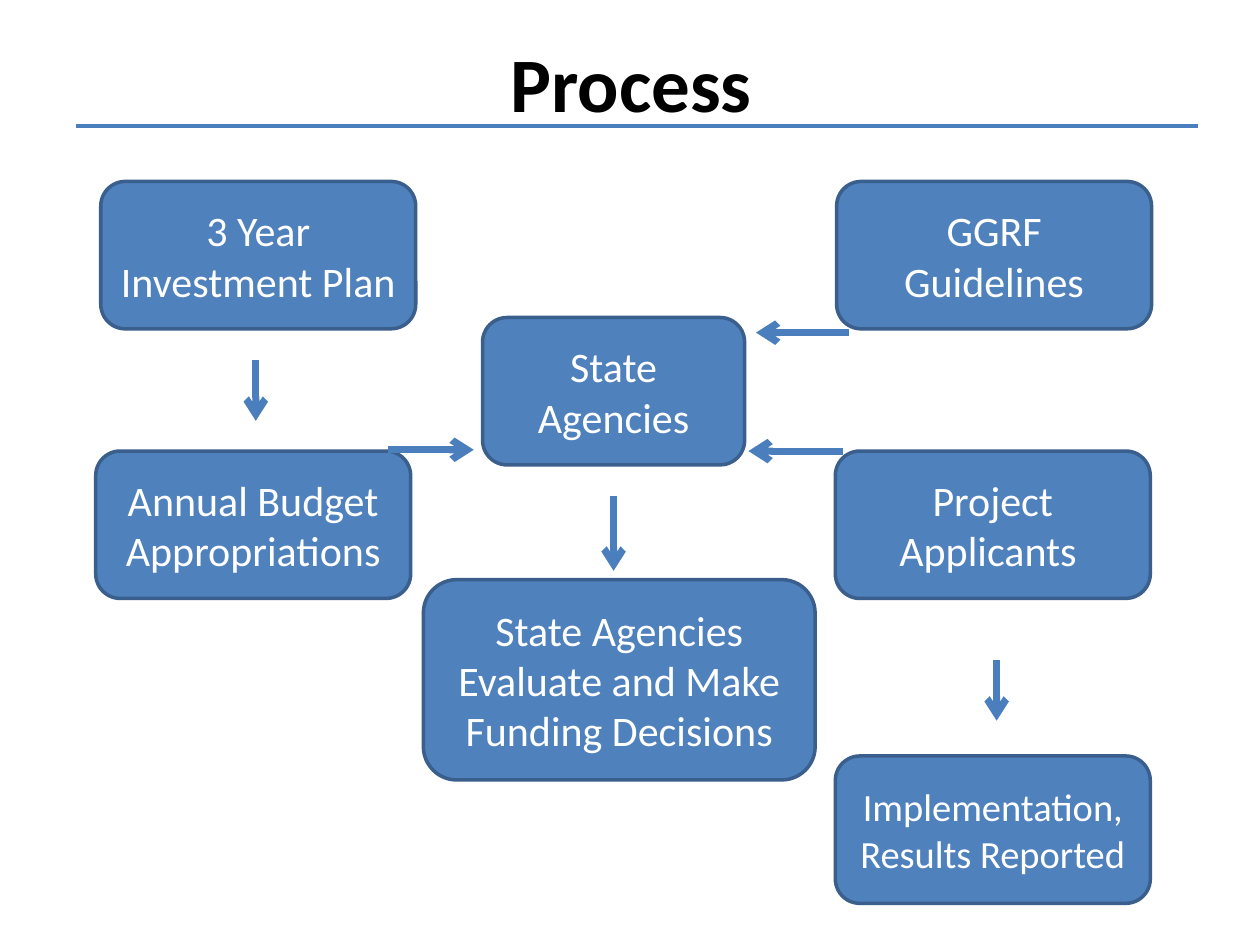
from dataclasses import dataclass

import pptx
import pptx.dml.color
import pptx.enum.shapes
import pptx.enum.text
import pptx.oxml.ns
import pptx.shapes.connector
import pptx.slide
import pptx.text.text
import pptx.util
from lxml import etree

Inches = pptx.util.Inches


@dataclass(frozen=True)
class Theme:
    font: str = "Calibri"
    title_color: str = "000000"
    box_text: str = "FFFFFF"
    box_fill: str = "4F81BD"
    box_outline: str = "3A5F8C"
    line_color: str = "4B7EBC"
    title_size: float = 44
    box_size: float = 24
    small_size: float = 22
    outline_width: float = 2
    rule_width: float = 2
    arrow_width: float = 4


@dataclass(frozen=True)
class Box:
    text: str
    left: float
    top: float
    width: float = 2.5
    height: float = 1.17
    size: float = Theme.box_size


@dataclass(frozen=True)
class Line:
    start: tuple[float, float]
    end: tuple[float, float]
    width: float = Theme.arrow_width
    has_arrowhead: bool = True


THEME = Theme()
LEFT_TOP, RIGHT_LEFT = 1.44, 6.63
MIDDLE_TOP = 3.58

BOXES = [
    Box("3 Year Investment Plan", 0.8, LEFT_TOP),
    Box("Annual Budget Appropriations", 0.76, MIDDLE_TOP),
    Box("State Agencies", 3.83, 2.52, width=2.08),
    Box("GGRF Guidelines", 6.64, LEFT_TOP),
    Box("State Agencies Evaluate and Make Funding Decisions", 3.36, 4.6, 3.11, 1.59),
    Box("Project Applicants ", RIGHT_LEFT, MIDDLE_TOP),
    Box("Implementation, Results Reported", RIGHT_LEFT, 6, size=THEME.small_size),
]

LINES = [
    Line((0.6, 1), (9.51, 1), THEME.rule_width, has_arrowhead=False),
    Line((2.03, 2.86), (2.03, 3.34)),
    Line((3.08, 3.57), (3.76, 3.57)),
    Line((6.74, 2.64), (6, 2.64)),
    Line((4.87, 3.94), (4.87, 4.53)),
    Line((7.91, 5.24), (7.91, 5.72)),
    Line((6.69, 3.58), (5.94, 3.58)),
]


def rgb(value: str) -> pptx.dml.color.RGBColor:
    return pptx.dml.color.RGBColor.from_string(value)


def write_centered(
    text_frame: pptx.text.text.TextFrame,
    text: str,
    size: float,
    color: str,
    bold: bool = False,
) -> None:
    text_frame.text = text
    text_frame.word_wrap = True
    text_frame.vertical_anchor = pptx.enum.text.MSO_ANCHOR.MIDDLE
    paragraph = text_frame.paragraphs[0]
    paragraph.alignment = pptx.enum.text.PP_ALIGN.CENTER
    font = paragraph.runs[0].font
    font.name = THEME.font
    font.size = pptx.util.Pt(size)
    font.bold = bold
    font.color.rgb = rgb(color)


def add_title(slide: pptx.slide.Slide, text: str) -> None:
    title = slide.shapes.add_textbox(Inches(0.51), Inches(0.17), Inches(9), Inches(0.95))
    write_centered(title.text_frame, text, THEME.title_size, THEME.title_color, bold=True)


def add_box(slide: pptx.slide.Slide, box: Box) -> None:
    shape = slide.shapes.add_shape(
        pptx.enum.shapes.MSO_SHAPE.ROUNDED_RECTANGLE,
        Inches(box.left),
        Inches(box.top),
        Inches(box.width),
        Inches(box.height),
    )
    shape.shadow.inherit = False
    shape.fill.solid()
    shape.fill.fore_color.rgb = rgb(THEME.box_fill)
    shape.line.color.rgb = rgb(THEME.box_outline)
    shape.line.width = pptx.util.Pt(THEME.outline_width)
    write_centered(shape.text_frame, box.text, box.size, THEME.box_text)


def add_line(slide: pptx.slide.Slide, line: Line) -> None:
    connector = slide.shapes.add_connector(
        pptx.enum.shapes.MSO_CONNECTOR.STRAIGHT,
        *(Inches(value) for value in line.start + line.end),
    )
    connector.line.color.rgb = rgb(THEME.line_color)
    connector.line.width = pptx.util.Pt(line.width)
    qn = pptx.oxml.ns.qn
    properties = connector._element.spPr
    if line.has_arrowhead:
        etree.SubElement(properties.find(qn("a:ln")), qn("a:tailEnd"), type="arrow")
    etree.SubElement(properties, qn("a:effectLst"))


def main() -> None:
    presentation = pptx.Presentation()
    presentation.slide_width = Inches(10)
    presentation.slide_height = Inches(7.5)
    slide = presentation.slides.add_slide(presentation.slide_layouts[6])
    add_title(slide, "Process")
    for box in BOXES:
        add_box(slide, box)
    for line in LINES:
        add_line(slide, line)
    presentation.save("out.pptx")


if __name__ == "__main__":
    main()
